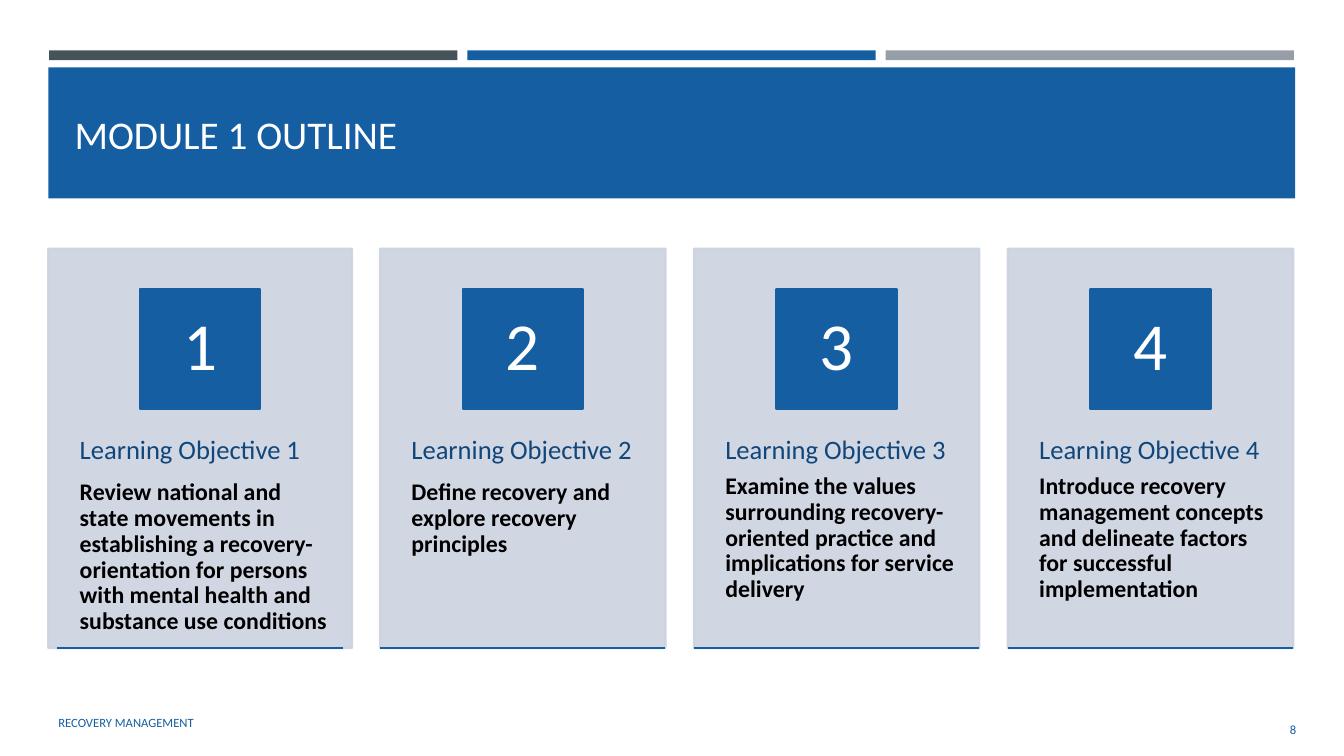
from pptx import Presentation
from pptx import util as u
from pptx.dml.color import RGBColor
from pptx.enum import shapes, text
from pptx.oxml.ns import qn
from lxml import etree

TITLE = "MODULE 1 OUTLINE"
FOOTER = "RECOVERY MANAGEMENT"
PAGE_NUMBER = "8"
OBJECTIVES = [
    ("Review national and state movements in establishing a recovery-orientation "
     "for persons with mental health and substance use conditions", 10.5),
    ("Define recovery and explore recovery principles", 10.5),
    ("Examine the values surrounding recovery-oriented practice and implications "
     "for service delivery", 6),
    ("Introduce recovery management concepts and delineate factors for successful "
     "implementation", 6),
]
COLORS = {
    "slate": "465359", "blue": "155EA1", "grey": "969FA7", "card": "CCD2E0",
    "heading": "104679", "body": "000000", "white": "FFFFFF", "title": "FFFEFF",
}
FONT = "Calibri"
FIRST_LEFT, FIRST_WIDTH = 1.22, 7.65
CARD_LEFT, CARD_PITCH, CARD_WIDTH = 9.58, 7.91, 7.19
CARD_TOP, CARD_HEIGHT = 6.27, 10.06
TEXT_TOP, TEXT_HEIGHT = 10.1, 6.05
SQUARE_TOP, SQUARE_SIDE = 7.29, 3.02
TEXT_INSETS = (0.79, 0.91, 0.56, 0.91)


def color(name):
    return RGBColor.from_string(COLORS[name])


def set_frame(frame, anchor, insets=(0.25, 0.13, 0.25, 0.13)):
    frame.word_wrap = True
    frame.auto_size = text.MSO_AUTO_SIZE.NONE
    frame.vertical_anchor = anchor
    frame.margin_left, frame.margin_top, frame.margin_right, frame.margin_bottom = map(u.Cm, insets)


def add_span(para, words, size, name, bold=False):
    span = para.add_run()
    span.text = words
    span.font.name = FONT
    span.font.size = u.Pt(size)
    span.font.bold = bold
    span.font.color.rgb = color(name)


def add_box(page, left, top, width, height, anchor, insets=(0.25, 0.13, 0.25, 0.13)):
    box = page.shapes.add_textbox(u.Cm(left), u.Cm(top), u.Cm(width), u.Cm(height))
    set_frame(box.text_frame, anchor, insets)
    return box.text_frame


def add_rect(page, left, top, width, height, name, outlined=False):
    rect = page.shapes.add_shape(shapes.MSO_SHAPE.RECTANGLE,
                                 u.Cm(left), u.Cm(top), u.Cm(width), u.Cm(height))
    rect.shadow.inherit = False
    rect.fill.solid()
    rect.fill.fore_color.rgb = color(name)
    if outlined:
        rect.line.color.rgb = color(name)
        rect.line.width = u.Pt(1.75)
    else:
        rect.line.fill.background()
    return rect


def add_card(page, number, objective, gap, left, width):
    card = add_rect(page, left, CARD_TOP, width, CARD_HEIGHT, "card", True)
    for tint in card._element.spPr.iter(qn("a:srgbClr")):
        etree.SubElement(tint, qn("a:alpha")).set("val", "90000")

    frame = add_box(page, left, TEXT_TOP, width, TEXT_HEIGHT, text.MSO_ANCHOR.TOP, TEXT_INSETS)
    heading = frame.paragraphs[0]
    heading.line_spacing = 0.9
    heading.space_after = u.Pt(gap)
    add_span(heading, f"Learning Objective {number}", 19, "heading")
    body = frame.add_paragraph()
    body.line_spacing = 0.9
    add_span(body, objective, 17, "body", True)

    middle = left + width / 2
    square = add_rect(page, middle - SQUARE_SIDE / 2, SQUARE_TOP, SQUARE_SIDE, SQUARE_SIDE,
                      "blue", True)
    set_frame(square.text_frame, text.MSO_ANCHOR.MIDDLE, (0.23, 0.03, 0.23, 0.03))
    para = square.text_frame.paragraphs[0]
    para.alignment = text.PP_ALIGN.CENTER
    para.line_spacing = 0.9
    add_span(para, str(number), 48, "white")

    bottom = u.Cm(CARD_TOP + CARD_HEIGHT)
    rule = page.shapes.add_connector(shapes.MSO_CONNECTOR.STRAIGHT,
                                     u.Cm(middle - CARD_WIDTH / 2), bottom,
                                     u.Cm(middle + CARD_WIDTH / 2), bottom)
    rule.line.color.rgb = color("blue")
    rule.line.width = u.Pt(1.75)
    etree.SubElement(rule._element.spPr, qn("a:effectLst"))


def main():
    deck = Presentation()
    deck.slide_width, deck.slide_height = u.Cm(33.87), u.Cm(19.05)
    page = deck.slides.add_slide(deck.slide_layouts[5])

    for index, name in enumerate(("slate", "blue", "grey")):
        add_rect(page, 1.24 + index * 10.54, 1.27, 10.29, 0.25, name)
    band = add_rect(page, 1.22, 1.7, 31.42, 3.3, "blue")

    title = page.shapes.title
    band._element.addnext(title._element)
    title.left, title.top, title.width, title.height = map(u.Cm, (1.63, 1.96, 30.63, 2.82))
    set_frame(title.text_frame, text.MSO_ANCHOR.MIDDLE)
    para = title.text_frame.paragraphs[0]
    para.alignment = text.PP_ALIGN.LEFT
    add_span(para, TITLE, 28, "title")

    for index, (objective, gap) in enumerate(OBJECTIVES):
        if index == 0:
            left, width = FIRST_LEFT, FIRST_WIDTH
        else:
            left, width = CARD_LEFT + (index - 1) * CARD_PITCH, CARD_WIDTH
        add_card(page, index + 1, objective, gap, left, width)

    footer = add_box(page, 1.22, 17.7, 18.95, 1.02, text.MSO_ANCHOR.MIDDLE)
    add_span(footer.paragraphs[0], FOOTER, 9, "blue")
    page_number = add_box(page, 30, 17.86, 2.92, 1.02, text.MSO_ANCHOR.MIDDLE)
    page_number.paragraphs[0].alignment = text.PP_ALIGN.RIGHT
    add_span(page_number.paragraphs[0], PAGE_NUMBER, 9, "blue")

    deck.save("out.pptx")


if __name__ == "__main__":
    main()
